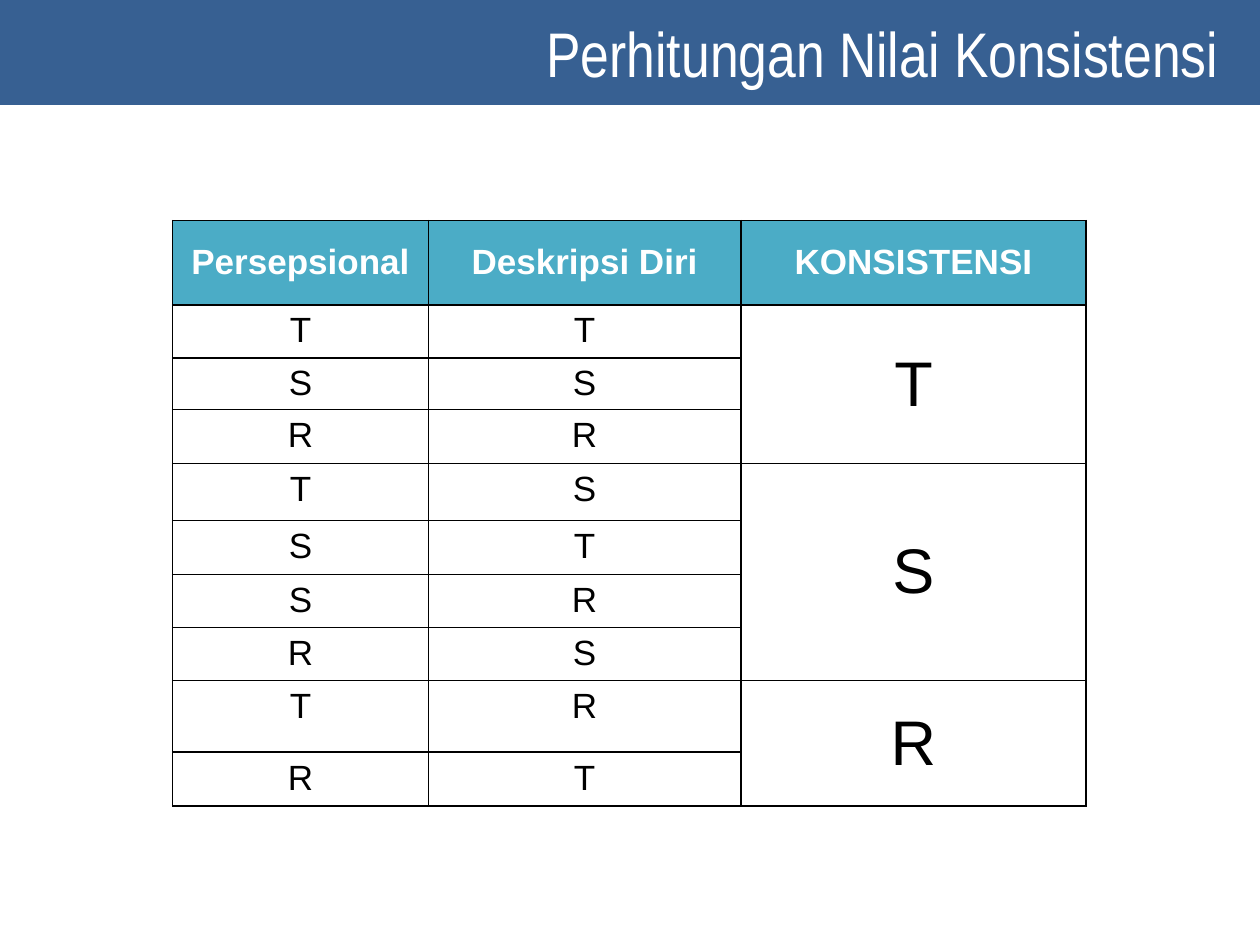
from dataclasses import dataclass

from lxml import etree
from pptx import Presentation
from pptx.dml.color import RGBColor
from pptx.enum.text import MSO_ANCHOR, MSO_AUTO_SIZE, PP_ALIGN
from pptx.oxml.ns import qn
from pptx.util import Inches, Pt

TOP, MIDDLE = MSO_ANCHOR.TOP, MSO_ANCHOR.MIDDLE
CENTER, RIGHT = PP_ALIGN.CENTER, PP_ALIGN.RIGHT
NO_AUTOFIT = MSO_AUTO_SIZE.NONE

NAVY = RGBColor(0x37, 0x60, 0x92)
TEAL = RGBColor(0x4B, 0xAC, 0xC6)
WHITE = RGBColor(0xFF, 0xFF, 0xFF)
BLACK = RGBColor(0x00, 0x00, 0x00)

SLIDE_WIDTH, SLIDE_HEIGHT = Inches(10), Inches(7.5)
TITLE_SHARE = 1 / 9
TABLE_LEFT, TABLE_TOP = Inches(1.37), Inches(1.75)
COLUMN_WIDTHS = (2.03, 2.48, 2.74)
ROW_HEIGHTS = (0.67, 0.42, 0.41, 0.43, 0.45, 0.43, 0.42, 0.42, 0.57, 0.43)
BORDER_SIDES = ("lnL", "lnR", "lnT", "lnB")


@dataclass(frozen=True)
class CellStyle:
    fill: RGBColor
    color: RGBColor
    size: int
    bold: bool
    anchor: MSO_ANCHOR


@dataclass(frozen=True)
class ConsistencyGroup:
    result: str
    pairs: tuple[str, ...]  # perception letter, then self-description letter


HEADER = CellStyle(TEAL, WHITE, 20, True, MIDDLE)
BODY = CellStyle(WHITE, BLACK, 20, False, TOP)
RESULT = CellStyle(WHITE, BLACK, 36, False, MIDDLE)

HEADINGS = ("Persepsional", "Deskripsi Diri", "KONSISTENSI")
GROUPS = (
    ConsistencyGroup("T", ("TT", "SS", "RR")),
    ConsistencyGroup("S", ("TS", "ST", "SR", "RS")),
    ConsistencyGroup("R", ("TR", "RT")),
)


def apply_format(target, values: dict) -> None:
    for name, value in values.items():
        setattr(target, name, value)


def add_borders(cell) -> None:
    properties = cell._tc.get_or_add_tcPr()
    for index, side in enumerate(BORDER_SIDES):
        line = etree.Element(qn(f"a:{side}"), w=str(Pt(1)))
        fill = etree.SubElement(line, qn("a:solidFill"))
        etree.SubElement(fill, qn("a:srgbClr"), val=str(BLACK))
        properties.insert(index, line)


def style_cell(cell, style: CellStyle) -> None:
    cell.fill.solid()
    cell.fill.fore_color.rgb = style.fill
    cell.vertical_anchor = style.anchor
    add_borders(cell)


def write_cell(cell, text: str, style: CellStyle) -> None:
    style_cell(cell, style)
    paragraph = cell.text_frame.paragraphs[0]
    paragraph.alignment = CENTER
    # Space before is a share of the line height
    spacing = etree.SubElement(paragraph._p.get_or_add_pPr(), qn("a:spcBef"))
    etree.SubElement(spacing, qn("a:spcPct"), val="20000")
    run = paragraph.add_run()
    run.text = text
    apply_format(run.font, {"name": "Arial", "size": Pt(style.size), "bold": style.bold})
    run.font.color.rgb = style.color


def add_title(slide, text: str) -> None:
    title = slide.shapes.title
    apply_format(title, {"left": 0, "top": 0, "width": SLIDE_WIDTH,
                         "height": int(SLIDE_HEIGHT * TITLE_SHARE)})
    title.fill.solid()
    title.fill.fore_color.rgb = NAVY
    apply_format(title.text_frame, {"text": text, "vertical_anchor": MIDDLE,
                                    "auto_size": NO_AUTOFIT, "word_wrap": True,
                                    "margin_right": Inches(0.33)})
    paragraph = title.text_frame.paragraphs[0]
    paragraph.alignment = RIGHT
    font = paragraph.runs[0].font
    apply_format(font, {"name": "Arial Narrow", "size": Pt(36)})
    font.color.rgb = WHITE


def add_consistency_table(slide) -> None:
    table = slide.shapes.add_table(
        len(ROW_HEIGHTS), len(COLUMN_WIDTHS), TABLE_LEFT, TABLE_TOP,
        Inches(sum(COLUMN_WIDTHS)), Inches(sum(ROW_HEIGHTS))).table
    for column, width in zip(table.columns, COLUMN_WIDTHS):
        column.width = Inches(width)
    for row, height in zip(table.rows, ROW_HEIGHTS):
        row.height = Inches(height)

    # Header row
    for column, heading in enumerate(HEADINGS):
        write_cell(table.cell(0, column), heading, HEADER)

    # Letter pairs, with one merged result beside each group
    first = 1
    for group in GROUPS:
        last = first + len(group.pairs) - 1
        for row, pair in enumerate(group.pairs, first):
            for column, letter in enumerate(pair):
                write_cell(table.cell(row, column), letter, BODY)
            if row > first:
                style_cell(table.cell(row, 2), RESULT)
        table.cell(first, 2).merge(table.cell(last, 2))
        write_cell(table.cell(first, 2), group.result, RESULT)
        first = last + 1


def main() -> None:
    presentation = Presentation()
    apply_format(presentation, {"slide_width": SLIDE_WIDTH, "slide_height": SLIDE_HEIGHT})
    slide = presentation.slides.add_slide(presentation.slide_layouts[5])
    add_title(slide, "Perhitungan Nilai Konsistensi")
    add_consistency_table(slide)
    presentation.save("out.pptx")


if __name__ == "__main__":
    main()
